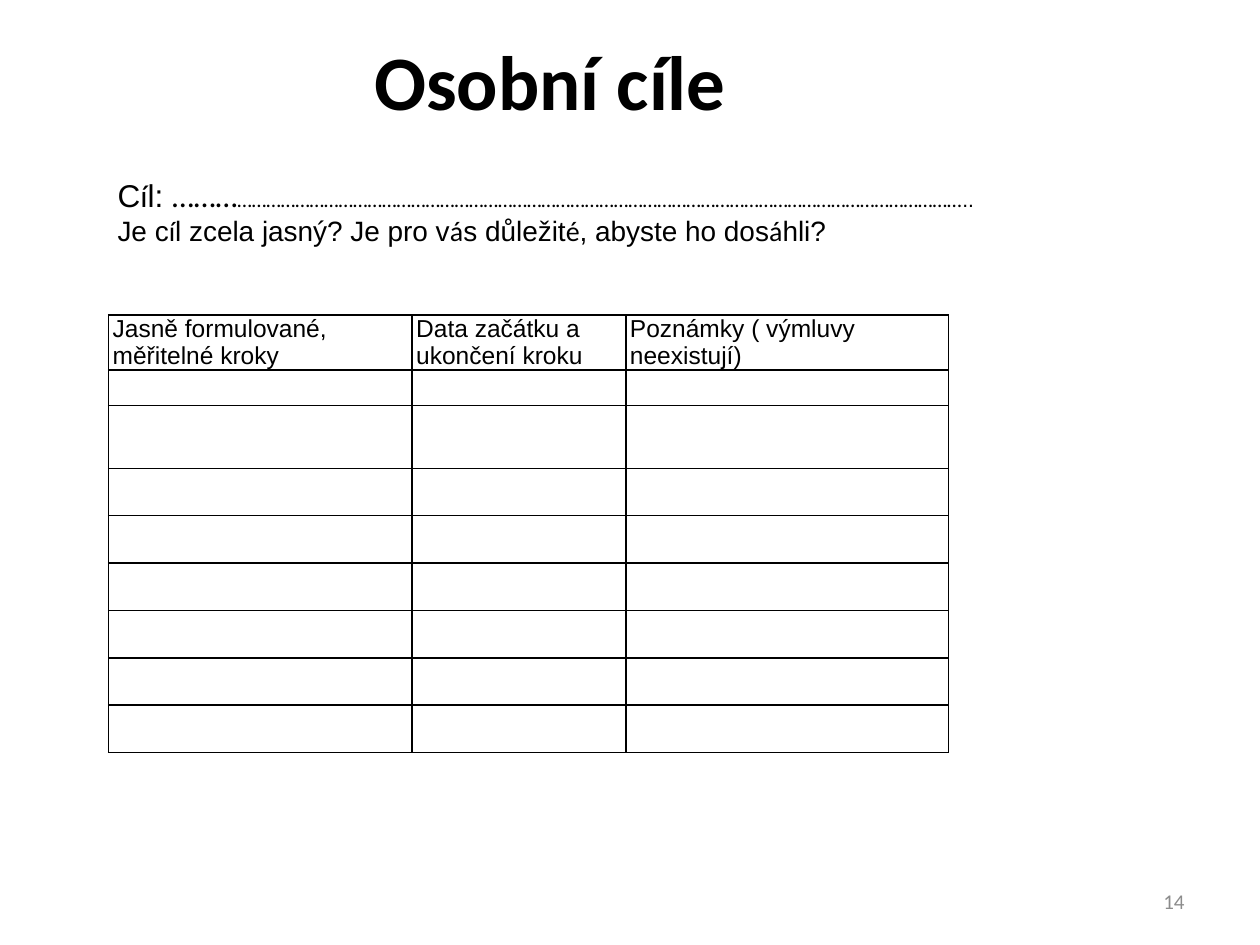
from lxml import etree
from pptx import Presentation
from pptx.dml.color import RGBColor
from pptx.enum.text import MSO_ANCHOR, MSO_AUTO_SIZE, PP_ALIGN
from pptx.oxml.ns import qn
from pptx.util import Cm, Pt

TOP, MIDDLE = MSO_ANCHOR.TOP, MSO_ANCHOR.MIDDLE
LEFT, RIGHT = PP_ALIGN.LEFT, PP_ALIGN.RIGHT
NO_AUTOFIT = MSO_AUTO_SIZE.NONE
COLORS = {"text": "000000", "border": "000000", "number": "8C8C8C"}


def format_run(run, font, size, color="text", bold=False):
    run.font.name = font
    run.font.size = Pt(size)
    run.font.bold = bold
    run.font.color.rgb = RGBColor.from_string(COLORS[color])


def place(shape, left, top, width, height, anchor):
    """Position a text shape, in cm, and clear its insets."""
    shape.left, shape.top = Cm(left), Cm(top)
    shape.width, shape.height = Cm(width), Cm(height)
    frame = shape.text_frame
    frame.margin_left = frame.margin_right = 0
    frame.margin_top = frame.margin_bottom = 0
    frame.word_wrap = True
    frame.auto_size = NO_AUTOFIT
    frame.vertical_anchor = anchor


presentation = Presentation()
presentation.slide_width, presentation.slide_height = Cm(25.4), Cm(19.05)
slide = presentation.slides.add_slide(presentation.slide_layouts[1])

# Title
title = slide.shapes.title
place(title, 7.54, 0.67, 10, 1.9, TOP)
title.text_frame.text = "Osobní cíle"
paragraph = title.text_frame.paragraphs[0]
paragraph.alignment = LEFT
format_run(paragraph.runs[0], "Calibri", 44, bold=True)

# Goal line and question
goal_lines = [
    [("C", "Arial", 18), ("í", "Calibri", 18), ("l: ", "Arial", 18),
     ("………", "Calibri", 18), ("…" * 50, "Calibri", 12), ("..", "Arial", 12)],
    [("Je c", "Arial", 16), ("í", "Calibri", 16),
     ("l zcela jasný? Je pro v", "Arial", 16), ("á", "Calibri", 16),
     ("s důležit", "Arial", 16), ("é", "Calibri", 16),
     (", abyste ho dos", "Arial", 16), ("á", "Calibri", 16),
     ("hli?", "Arial", 16)],
]
body = slide.placeholders[1]
place(body, 2.37, 3.55, 20, 1.6, TOP)
for index, parts in enumerate(goal_lines):
    frame = body.text_frame
    paragraph = frame.add_paragraph() if index else frame.paragraphs[0]
    paragraph.space_before = Pt(0)
    properties = paragraph._p.get_or_add_pPr()
    properties.set("marL", "0")
    properties.set("indent", "0")
    etree.SubElement(properties, qn("a:buNone"))
    for text, font, size in parts:
        run = paragraph.add_run()
        run.text = text
        format_run(run, font, size)

# Table of steps
headers = ["Jasně formulované, měřitelné kroky", "Data začátku a ukončení kroku",
           "Poznámky ( výmluvy neexistují)"]
column_widths = [6.12, 4.31, 6.5]
row_heights = [1.11, 0.71, 1.27] + [0.955] * 6
table = slide.shapes.add_table(
    len(row_heights), len(column_widths), Cm(2.19), Cm(6.35),
    Cm(sum(column_widths)), Cm(sum(row_heights))).table
table.first_row = table.horz_banding = False
for column, width in zip(table.columns, column_widths):
    column.width = Cm(width)
for row, height in zip(table.rows, row_heights):
    row.height = Cm(round(height, 3))
for cell, header in zip(table.rows[0].cells, headers):
    cell.text = header
    format_run(cell.text_frame.paragraphs[0].runs[0], "Arial", 14)
for cell in table.iter_cells():
    cell.margin_left = cell.margin_right = Cm(0.08)
    cell.margin_top = cell.margin_bottom = 0
    # Keeps empty rows from growing past their height
    cell.text_frame.paragraphs[0]._p.get_or_add_endParaRPr().set("sz", "1400")
    properties = cell._tc.get_or_add_tcPr()
    for side in ("a:lnL", "a:lnR", "a:lnT", "a:lnB"):
        line = etree.SubElement(properties, qn(side), w=str(Pt(1)))
        fill = etree.SubElement(line, qn("a:solidFill"))
        etree.SubElement(fill, qn("a:srgbClr"), val=COLORS["border"])
    cell.fill.background()

# Slide number
number = slide.shapes.add_textbox(0, 0, 0, 0)
place(number, 18.21, 17.65, 5.67, 1.02, MIDDLE)
number.text_frame.text = "14"
paragraph = number.text_frame.paragraphs[0]
paragraph.alignment = RIGHT
format_run(paragraph.runs[0], "Calibri", 12, "number")

presentation.save("out.pptx")
